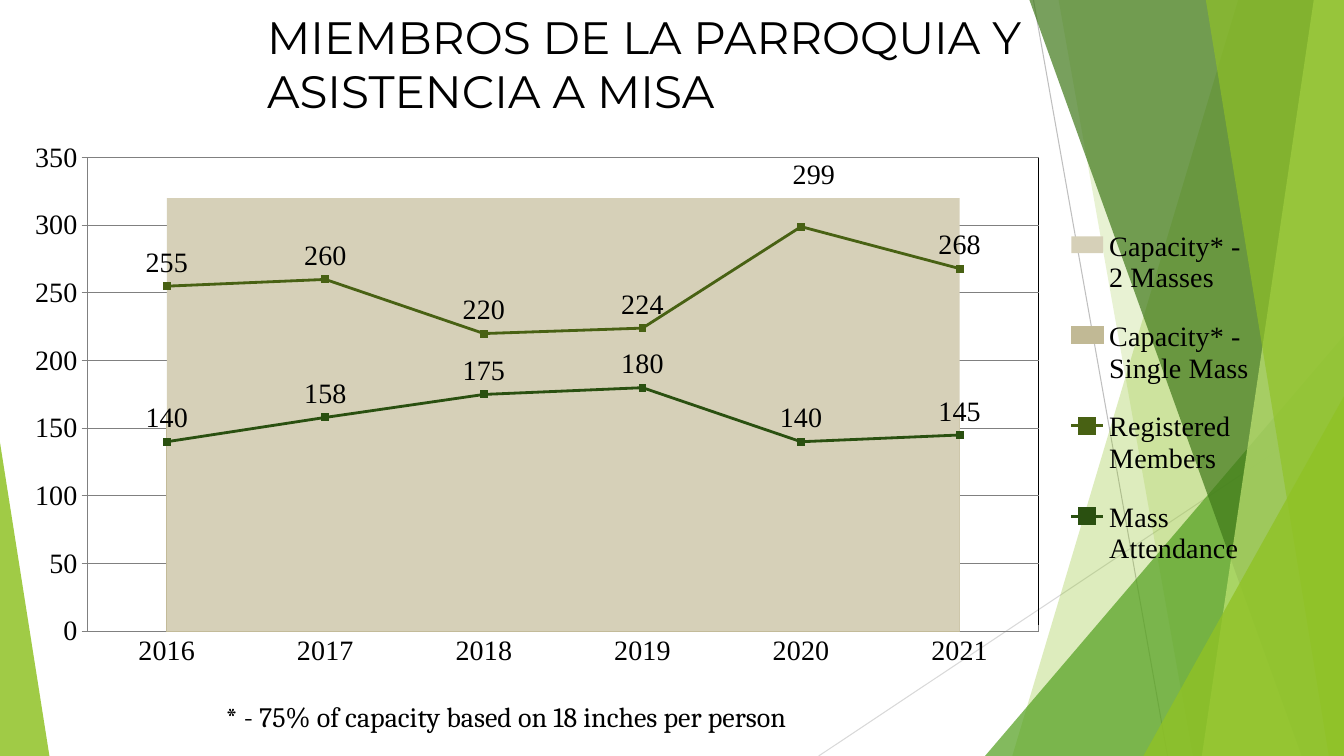
from lxml.etree import SubElement
from pptx import Presentation
from pptx.chart.data import CategoryChartData
from pptx.dml.color import RGBColor
from pptx.enum.chart import (XL_CHART_TYPE, XL_LABEL_POSITION, XL_LEGEND_POSITION,
                             XL_MARKER_STYLE, XL_TICK_MARK)
from pptx.enum.shapes import MSO_CONNECTOR, MSO_SHAPE
from pptx.enum.text import MSO_ANCHOR
from pptx.oxml import parse_xml
from pptx.oxml.ns import nsdecls, qn
from pptx.util import Inches, Pt

W, H = 13.33, 7.5
COLORS = {
    "black": "000000", "axis": "808080", "line": "BFBFBF", "pale_line": "D9D9D9",
    "lime": "90C226", "green": "54A021", "forest": "3F7819", "light": "C0E474",
    "sand": "D6D0B8", "dark_sand": "C1B995", "members": "486113", "attendance": "2A5010",
}
YEARS = [str(year) for year in range(2016, 2022)]
CAPACITY = [("Capacity* - 2 Masses", [320] * 6, "sand"),
            ("Capacity* - Single Mass", [160] * 6, "dark_sand")]
PEOPLE = [("Registered Members", [255, 260, 220, 224, 299, 268], "members"),
          ("Mass Attendance", [140, 158, 175, 180, 140, 145], "attendance")]


def rgb(name):
    return RGBColor.from_string(COLORS[name])


def set_layout(parent, after, **values):
    """Give a chart part a manual layout, placed after the child tagged `after`."""
    for old in parent.findall(qn("c:layout")):
        parent.remove(old)
    layout = parse_xml(f"<c:layout {nsdecls('c')}><c:manualLayout/></c:layout>")
    for tag, value in values.items():
        SubElement(layout[0], qn(f"c:{tag}")).set("val", str(value))
    if after:
        parent.find(qn(after)).addnext(layout)
    else:
        parent.insert(0, layout)


def move_to_lines(area, count):
    """Move the last `count` series of an area plot to a line plot on the same axes."""
    line = parse_xml(f'<c:lineChart {nsdecls("c")}><c:grouping val="standard"/>'
                     '<c:varyColors val="0"/><c:marker val="1"/></c:lineChart>')
    for ser in area.findall(qn("c:ser"))[-count:]:
        line.find(qn("c:marker")).addprevious(ser)
    for axis in area.findall(qn("c:axId")):
        SubElement(line, qn("c:axId")).set("val", axis.get("val"))
    area.addnext(line)


class Deck:
    """Holds the style and the current slide."""

    def __init__(self):
        self.prs = Presentation()
        self.prs.slide_width, self.prs.slide_height = Inches(W), Inches(H)
        self.s = self.prs.slides.add_slide(self.prs.slide_layouts[6])

    def paint(self, sp, color, opacity):
        sp.shadow.inherit = False
        sp.fill.solid()
        sp.fill.fore_color.rgb = rgb(color)
        sp.line.fill.background()
        fill = sp.fill._xPr.find(qn("a:solidFill"))
        SubElement(fill[0], qn("a:alpha")).set("val", str(opacity * 1000))

    def line(self, x1, y1, x2, y2, color):
        c = self.s.shapes.add_connector(MSO_CONNECTOR.STRAIGHT, Inches(x1), Inches(y1),
                                        Inches(x2), Inches(y2))
        c.line.color.rgb = rgb(color)
        c.line.width = Pt(0.75)
        SubElement(c._element.spPr, qn("a:effectLst"))

    def band(self, top, bottom, color, opacity):
        """Full-height band from a slanted left side to the right slide edge."""
        points = [(top, 0), (W, 0), (W, H), (bottom, H)]
        start, *rest = [(Inches(x), Inches(y)) for x, y in points]
        fb = self.s.shapes.build_freeform(*start, scale=1.0)
        fb.add_line_segments(rest, close=True)
        self.paint(fb.convert_to_shape(), color, opacity)

    def triangle(self, x, y, w, h, apex, color, opacity):
        sp = self.s.shapes.add_shape(MSO_SHAPE.ISOSCELES_TRIANGLE, Inches(x), Inches(y),
                                     Inches(w), Inches(h))
        sp.adjustments[0] = apex
        self.paint(sp, color, opacity)

    def text(self, text, x, y, w, h, font, size, color="black"):
        tf = self.s.shapes.add_textbox(Inches(x), Inches(y), Inches(w), Inches(h)).text_frame
        tf.word_wrap = True
        tf.vertical_anchor = MSO_ANCHOR.TOP
        r = tf.paragraphs[0].add_run()
        r.text = text
        r.font.name, r.font.size = font, Pt(size)
        r.font.color.rgb = rgb(color)

    def chart(self, x, y, w, h):
        data = CategoryChartData()
        data.categories = YEARS
        for name, values, _ in CAPACITY + PEOPLE:
            data.add_series(name, values)
        chart = self.s.shapes.add_chart(XL_CHART_TYPE.AREA, Inches(x), Inches(y),
                                        Inches(w), Inches(h), data).chart
        chart.has_title = False
        chart.font.name, chart.font.size = "Times New Roman", Pt(20)
        chart.font.color.rgb = rgb("black")
        chart.plots[0].vary_by_categories = False
        move_to_lines(chart.plots[0]._element, len(PEOPLE))
        self.style_axes(chart)
        self.style_frame(chart)
        areas, lines = chart.plots
        for ser, (_, _, color) in zip(areas.series, CAPACITY):
            ser.format.fill.solid()
            ser.format.fill.fore_color.rgb = rgb(color)
        ser.format.line.color.rgb = rgb(color)
        ser.format.line.width = Pt(0.75)
        for ser, (_, _, color) in zip(lines.series, PEOPLE):
            self.style_line(ser, color)
        label = lines.series[0].points[4].data_label
        label.position = XL_LABEL_POSITION.ABOVE
        dLbls = lines.series[0]._element.find(qn("c:dLbls"))
        set_layout(dLbls.find(qn("c:dLbl")), "c:idx", x=0.01, y=-0.05)

    def style_line(self, ser, color):
        ser.smooth = False
        ser.format.line.color.rgb = rgb(color)
        ser.format.line.width = Pt(2)
        ser.marker.style, ser.marker.size = XL_MARKER_STYLE.SQUARE, 5
        ser.marker.format.fill.solid()
        ser.marker.format.fill.fore_color.rgb = rgb(color)
        ser.marker.format.line.color.rgb = rgb(color)
        ser.data_labels.show_value = True
        ser.data_labels.position = XL_LABEL_POSITION.ABOVE
        for leader in ser._element.iter(qn("c:showLeaderLines")):
            leader.set("val", "0")

    def style_axes(self, chart):
        cat, val = chart.category_axis, chart.value_axis
        val.minimum_scale, val.maximum_scale, val.major_unit = 0, 350, 50
        val.has_major_gridlines = True
        cat.has_major_gridlines = False
        cat.major_tick_mark, val.major_tick_mark = XL_TICK_MARK.INSIDE, XL_TICK_MARK.OUTSIDE
        for part in (cat, val, val.major_gridlines):
            part.format.line.color.rgb = rgb("axis")
            part.format.line.width = Pt(0.75)
        val._element.find(qn("c:crossBetween")).set("val", "between")

    def style_frame(self, chart):
        """Place the plot and the legend, and leave the background clear."""
        space = chart._chartSpace
        plot = space.chart.plotArea
        set_layout(plot, None, layoutTarget="inner", xMode="edge", yMode="edge",
                   x=0.057, y=0.049, w=0.739, h=0.839)
        plot.append(parse_xml(
            f'<c:spPr {nsdecls("c", "a")}><a:noFill/><a:ln w="9525"><a:solidFill>'
            f'<a:srgbClr val="{COLORS["black"]}"/></a:solidFill></a:ln></c:spPr>'))
        space.find(qn("c:txPr")).addprevious(parse_xml(
            f'<c:spPr {nsdecls("c", "a")}><a:noFill/><a:ln><a:noFill/></a:ln></c:spPr>'))
        chart.has_legend = True
        chart.legend.position = XL_LEGEND_POSITION.RIGHT
        chart.legend.include_in_layout = False
        set_layout(chart.legend._element, "c:legendPos", xMode="edge", yMode="edge",
                   x=0.82, y=0.13, w=0.14, h=0.69)


def main():
    deck = Deck()
    deck.line(10.25, 0, 11.58, H, "line")
    deck.line(W, 4.03, 8.12, H, "pale_line")
    deck.band(12.28, 10.04, "lime", 30)
    deck.band(10.5, 11.83, "lime", 20)
    deck.triangle(9.77, 3.33, 3.56, 4.17, 1, "green", 72)
    deck.band(10.21, 12.91, "forest", 70)
    deck.band(13.03, 11.92, "light", 70)
    deck.band(11.96, 13.18, "lime", 65)
    deck.triangle(11.34, 3.93, 1.99, 3.57, 1, "lime", 80)
    deck.triangle(0, 4.39, 0.49, 3.11, 0, "lime", 85)
    deck.text("MIEMBROS DE LA PARROQUIA Y ASISTENCIA A MISA", 2.55, 0.04, 9.12, 1.25,
              font="Montserrat", size=32.4)
    deck.text("* - 75% of capacity based on 18 inches per person", 2.14, 6.89, 6.92, 0.44,
              font="Cambria", size=20)
    deck.chart(0.14, 1.29, 12.77, 5.6)
    deck.prs.save("out.pptx")


if __name__ == "__main__":
    main()
